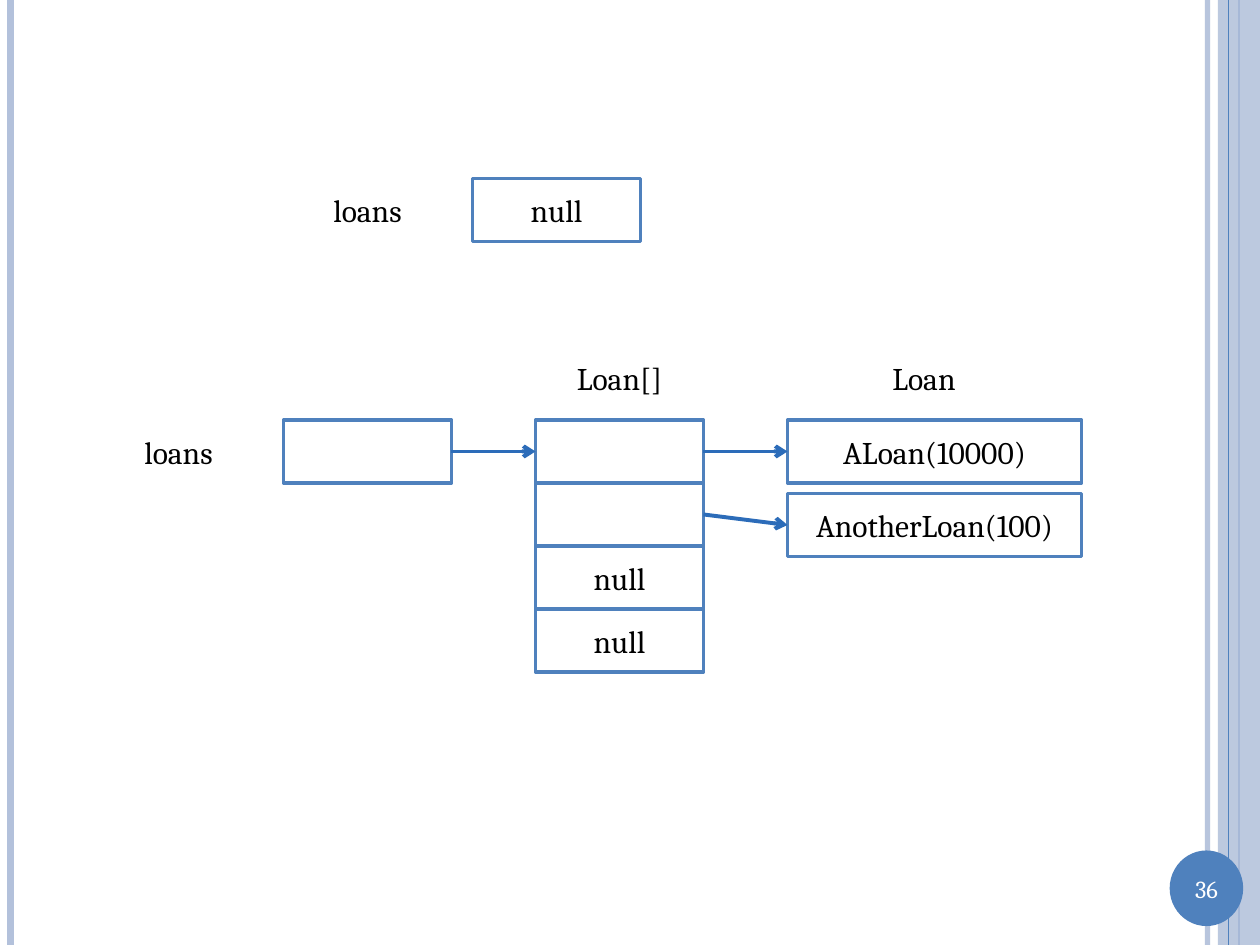
from typing import NamedTuple

from lxml.etree import SubElement
from pptx import Presentation
from pptx.dml.color import RGBColor
from pptx.enum.shapes import MSO_CONNECTOR, MSO_SHAPE
from pptx.enum.text import MSO_ANCHOR, PP_ALIGN
from pptx.oxml.ns import qn
from pptx.util import Emu, Pt

EMU_PER_PX = 7620  # 120 px to the inch
PAGE_WIDTH, PAGE_HEIGHT = 1200, 900
CELL_WIDTH, CELL_HEIGHT = 160, 60
LOAN_WIDTH = 280
VARIABLE_LEFT, ARRAY_LEFT, LOAN_LEFT = 270, 510, 750
HEAP_TOP = 400

BLUE, PALE_BLUE, ARROW_BLUE = "4F81BD", "B3C1DB", "2C6CB9"
WHITE, BLACK = "FFFFFF", "000000"


class Label(NamedTuple):
    text: str
    left: int
    top: int
    width: int = CELL_WIDTH
    height: int = CELL_HEIGHT
    size: int = 18
    color: str = BLACK


class Cell(NamedTuple):
    left: int
    top: int
    text: str = ""
    width: int = CELL_WIDTH


class Line(NamedTuple):
    start: tuple[int, int]
    end: tuple[int, int]
    color: str
    weight: float
    opacity: int = 100
    arrow: bool = False


def px(length: int) -> Emu:
    return Emu(length * EMU_PER_PX)


def rgb(color: str) -> RGBColor:
    return RGBColor.from_string(color)


def set_opacity(parent, percent: int) -> None:
    """Add an alpha value to the solid colour held in the given element."""
    if percent < 100:
        color = next(parent.iter(qn("a:srgbClr")))
        SubElement(color, qn("a:alpha"), val=str(percent * 1000))


def write_text(frame, text: str, size: int = 18, color: str = BLACK) -> None:
    for name, value in {"word_wrap": True, "vertical_anchor": MSO_ANCHOR.MIDDLE}.items():
        setattr(frame, name, value)
    para = frame.paragraphs[0]
    para.alignment = PP_ALIGN.CENTER
    span = para.add_run()
    span.text = text
    for name, value in {"name": "Cambria", "size": Pt(size)}.items():
        setattr(span.font, name, value)
    span.font.color.rgb = rgb(color)


def add_label(page, label: Label) -> None:
    box = page.shapes.add_textbox(
        px(label.left), px(label.top), px(label.width), px(label.height)
    )
    write_text(box.text_frame, label.text, label.size, label.color)


def add_filled_shape(page, kind, left: int, top: int, width: int, height: int,
                     fill: str, opacity: int = 100):
    shape = page.shapes.add_shape(kind, px(left), px(top), px(width), px(height))
    shape.shadow.inherit = False
    shape.fill.solid()
    shape.fill.fore_color.rgb = rgb(fill)
    set_opacity(shape.fill._xPr, opacity)
    shape.line.fill.background()
    return shape


def add_cell(page, cell: Cell) -> None:
    box = add_filled_shape(page, MSO_SHAPE.RECTANGLE, cell.left, cell.top,
                           cell.width, CELL_HEIGHT, WHITE)
    box.line.color.rgb = rgb(BLUE)
    box.line.width = Pt(2)
    if cell.text:
        write_text(box.text_frame, cell.text)


def add_line(page, line: Line) -> None:
    connector = page.shapes.add_connector(
        MSO_CONNECTOR.STRAIGHT, *(px(value) for value in line.start + line.end)
    )
    connector.line.color.rgb = rgb(line.color)
    connector.line.width = Pt(line.weight)
    outline = connector.line._get_or_add_ln()
    set_opacity(outline, line.opacity)
    if line.arrow:
        SubElement(outline, qn("a:tailEnd"), type="arrow")
    SubElement(connector._element.spPr, qn("a:effectLst"))


def add_stripe(page, left: int, color: str, weight: float, opacity: int = 100) -> None:
    add_line(page, Line((left, 0), (left, PAGE_HEIGHT), color, weight, opacity))


def add_frame(page) -> None:
    """Draw the side stripes and the numbered disc."""
    add_stripe(page, 1150, PALE_BLUE, 3, 93)
    add_stripe(page, 10, PALE_BLUE, 4.5)
    add_stripe(page, 1180, BLUE, 1.5)
    add_filled_shape(page, MSO_SHAPE.RECTANGLE, 1160, 0, 40, PAGE_HEIGHT, PALE_BLUE, 87)
    add_stripe(page, 1170, BLUE, 0.75)
    add_filled_shape(page, MSO_SHAPE.OVAL, 1114, 810, 70, 72, BLUE)
    add_label(page, Label("36", 1114, 826, 70, 41, 14, WHITE))


def add_diagram(page) -> None:
    labels = [
        Label("loans", 270, 170),
        Label("loans", 90, HEAP_TOP),
        Label("Loan[]", ARRAY_LEFT, 330),
        Label("Loan", 800, 330),
    ]
    cells = [Cell(450, 170, "null"), Cell(VARIABLE_LEFT, HEAP_TOP)]
    cells += [
        Cell(ARRAY_LEFT, HEAP_TOP + index * CELL_HEIGHT, text)
        for index, text in enumerate(["", "", "null", "null"])
    ]
    cells += [
        Cell(LOAN_LEFT, HEAP_TOP + index * 70, text, LOAN_WIDTH)
        for index, text in enumerate(["ALoan(10000)", "AnotherLoan(100)"])
    ]
    variable_right, array_right = VARIABLE_LEFT + CELL_WIDTH, ARRAY_LEFT + CELL_WIDTH
    first_row = HEAP_TOP + CELL_HEIGHT // 2
    arrows = [
        ((variable_right, first_row), (ARRAY_LEFT, first_row)),
        ((array_right, first_row), (LOAN_LEFT, first_row)),
        ((array_right, first_row + CELL_HEIGHT), (LOAN_LEFT, first_row + 70)),
    ]
    for label in labels:
        add_label(page, label)
    for cell in cells:
        add_cell(page, cell)
    for start, end in arrows:
        add_line(page, Line(start, end, ARROW_BLUE, 2.25, arrow=True))


def main() -> None:
    deck = Presentation()
    deck.slide_width, deck.slide_height = px(PAGE_WIDTH), px(PAGE_HEIGHT)
    page = deck.slides.add_slide(deck.slide_layouts[6])
    add_frame(page)
    add_diagram(page)
    deck.save("out.pptx")


if __name__ == "__main__":
    main()
